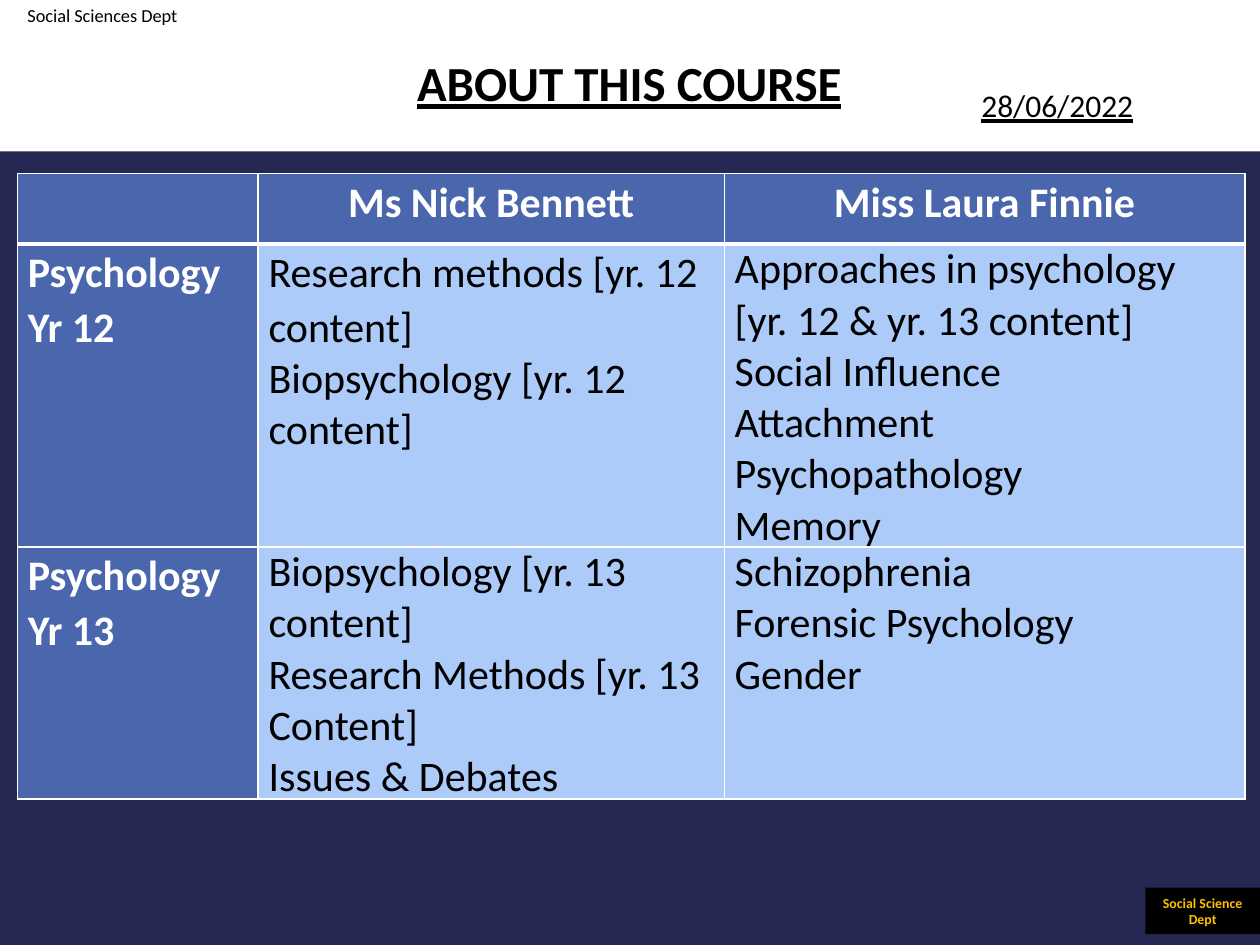
from lxml import etree
from pptx import Presentation
from pptx import util as u
from pptx.dml.color import RGBColor
from pptx.enum import shapes, text
from pptx.oxml import ns

Pt = u.Pt
NAVY = RGBColor(0x24, 0x28, 0x52)
BLUE = RGBColor(0x4A, 0x66, 0xAC)
PALE = RGBColor(0xAC, 0xCB, 0xF9)
GOLD = RGBColor(0xFF, 0xC0, 0x00)
WHITE = RGBColor(0xFF, 0xFF, 0xFF)
BLACK = RGBColor(0x00, 0x00, 0x00)
LEFT, CENTER = text.PP_ALIGN.LEFT, text.PP_ALIGN.CENTER

COURSES = [
    [[], ["Ms Nick Bennett"], ["Miss Laura Finnie"]],
    [["Psychology Yr 12"],
     ["Research methods [yr. 12 content]", "Biopsychology [yr. 12 content]"],
     ["Approaches in psychology [yr. 12 & yr. 13 content]", "Social Influence",
      "Attachment", "Psychopathology", "Memory"]],
    [["Psychology Yr 13"],
     ["Biopsychology [yr. 13 content]", "Research Methods [yr. 13 Content]",
      "Issues & Debates"],
     ["Schizophrenia", "Forensic Psychology", "Gender"]],
]


class SlideBuilder:
    font = "Calibri"

    def __init__(self, s):
        self.s = s

    def background(self, color):
        self.s.background.fill.solid()
        self.s.background.fill.fore_color.rgb = color

    def style(self, p, size, color, bold=False, underline=False, align=LEFT, spacing=1.0):
        p.alignment, p.line_spacing = align, spacing
        f = p.font
        f.name, f.size, f.bold, f.underline = self.font, Pt(size), bold, underline
        f.color.rgb = color

    def rect(self, x, y, w, h, color):
        sp = self.s.shapes.add_shape(shapes.MSO_SHAPE.RECTANGLE, Pt(x), Pt(y), Pt(w), Pt(h))
        sp.shadow.inherit = False
        sp.fill.solid()
        sp.fill.fore_color.rgb = color
        sp.line.fill.background()
        return sp

    def label(self, words, x, y, w, h, size, anchor=text.MSO_ANCHOR.TOP, inset=7.2, **style):
        sp = self.s.shapes.add_textbox(Pt(x), Pt(y), Pt(w), Pt(h))
        tf = sp.text_frame
        tf.word_wrap, tf.vertical_anchor = True, anchor
        tf.margin_left = tf.margin_right = Pt(inset)
        tf.text = words
        self.style(tf.paragraphs[0], size, BLACK, **style)

    def border(self, cell, bottom):
        """Draw white cell edges, 1 pt wide except the bottom one."""
        tcPr = cell._tc.get_or_add_tcPr()
        for i, (side, width) in enumerate(zip("LRTB", (1, 1, 1, bottom))):
            ln = etree.Element(ns.qn(f"a:ln{side}"), w=str(Pt(width)))
            fill = etree.SubElement(ln, ns.qn("a:solidFill"))
            etree.SubElement(fill, ns.qn("a:srgbClr"), val=str(WHITE))
            tcPr.insert(i, ln)

    def cell(self, cell, lines, header, first_col, loose):
        """Fill a cell; the first line is set looser when loose is true."""
        heading = header or first_col
        cell.margin_left = cell.margin_right = Pt(6)
        cell.margin_top = cell.margin_bottom = 0
        cell.fill.solid()
        cell.fill.fore_color.rgb = BLUE if heading else PALE
        self.border(cell, 3 if header else 1)
        cell.text = "\n".join(lines)
        for i, p in enumerate(cell.text_frame.paragraphs):
            self.style(p, 24, WHITE if heading else BLACK, bold=heading,
                       align=CENTER if header else LEFT,
                       spacing=1.07 if loose and i == 0 else 1.0)

    def table(self, rows, x, y, widths, heights):
        t = self.s.shapes.add_table(len(rows), len(widths), Pt(x), Pt(y),
                                    Pt(sum(widths)), Pt(sum(heights))).table
        for col, w in zip(t.columns, widths):
            col.width = Pt(w)
        for r, (row, h) in enumerate(zip(rows, heights)):
            t.rows[r].height = Pt(h)
            for c, lines in enumerate(row):
                loose = r == 0 or c == 0 or (r, c) == (1, 1)
                self.cell(t.cell(r, c), lines, r == 0, c == 0, loose)


def main():
    prs = Presentation()
    prs.slide_width, prs.slide_height = Pt(720), Pt(540)
    b = SlideBuilder(prs.slides.add_slide(prs.slide_layouts[6]))
    b.background(NAVY)
    b.rect(0, 0, 720, 86.5, WHITE)

    badge = b.rect(654.5, 507.3, 65.5, 26.6, BLACK)
    tf = badge.text_frame
    tf.word_wrap = True
    tf.text = "Social Science Dept"
    b.style(tf.paragraphs[0], 7.9, GOLD, bold=True, align=CENTER)

    b.label("Social Sciences Dept", 8.6, 0, 139, 18.7, 10.5, spacing=0.9)
    b.label("28/06/2022", 555.8, 41, 175, 38.2, 18, anchor=text.MSO_ANCHOR.MIDDLE,
            inset=5, underline=True)
    b.table(COURSES, 9.9, 99.2, [137.6, 266.4, 297.6], [40.3, 173, 144])
    b.label("ABOUT THIS COURSE", 155.5, 30.2, 408.2, 48.2, 28, bold=True,
            underline=True, align=CENTER, spacing=0.9)
    prs.save("out.pptx")


if __name__ == "__main__":
    main()
